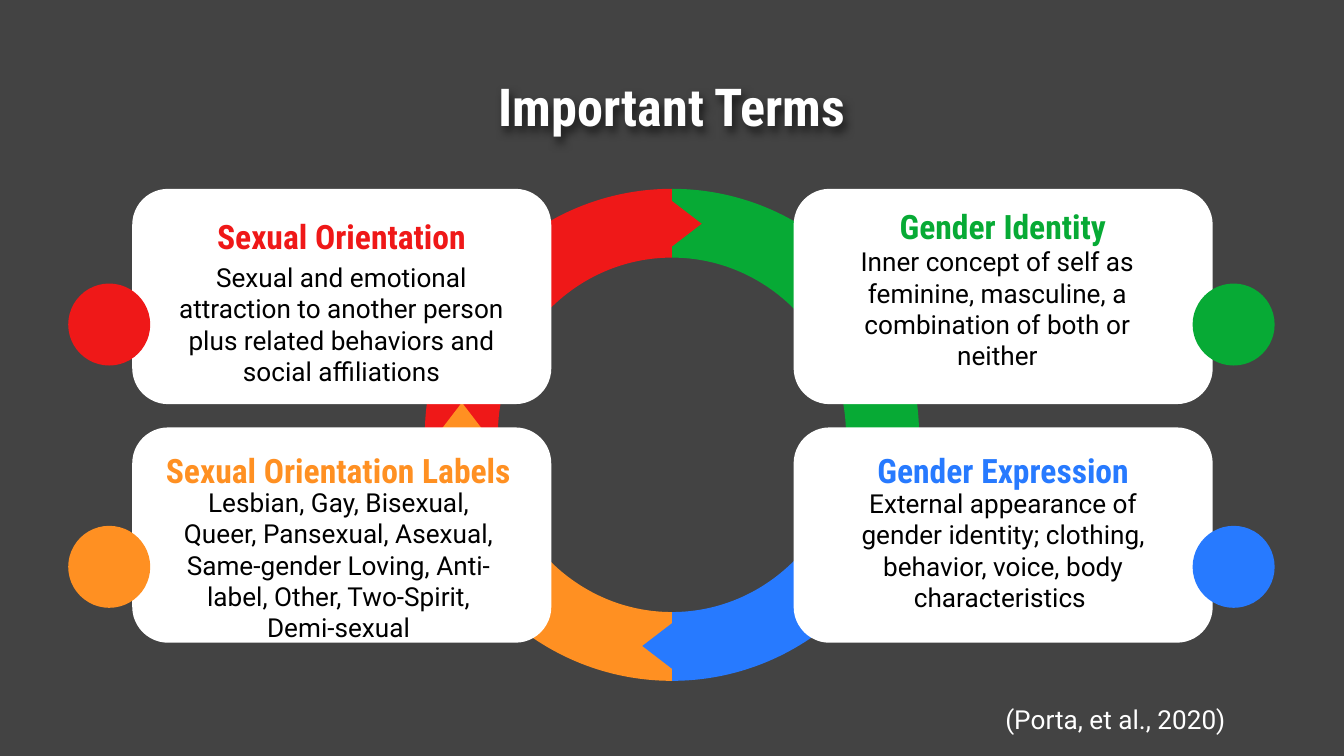
from lxml.etree import SubElement, fromstring
from pptx import Presentation
from pptx.dml.color import RGBColor
from pptx.enum.shapes import MSO_SHAPE
from pptx.enum.text import MSO_ANCHOR, PP_ALIGN
from pptx.oxml.ns import qn
from pptx.util import Cm, Pt

BACKGROUND = RGBColor(0x43, 0x43, 0x43)
WHITE = RGBColor(0xFF, 0xFF, 0xFF)
BLACK = RGBColor(0, 0, 0)
RED = RGBColor(0xEF, 0x18, 0x18)
GREEN = RGBColor(0x07, 0xAA, 0x35)
BLUE = RGBColor(0x27, 0x7A, 0xFF)
ORANGE = RGBColor(0xFF, 0x90, 0x22)
HEADING_FONT, BODY_FONT = "Roboto Condensed", "Roboto"

# Content: column, row, colour, heading and its box, body and its box (cm)
TERMS = [
    (0, 0, RED, "Sexual Orientation", (3.66, 3.86, 5.59, 1.19),
     "Sexual and emotional attraction to another person plus related "
     "behaviors and social affiliations", (3.0, 4.87, 6.91, 2.51)),
    (1, 0, GREEN, "Gender Identity", (16.73, 3.68, 4.45, 1.19),
     "Inner concept of self as feminine, masculine, a combination of both "
     "or neither", (15.6, 4.75, 6.5, 2.16)),
    (0, 1, ORANGE, "Sexual Orientation Labels", (2.84, 8.29, 7.11, 1.19),
     "Lesbian, Gay, Bisexual, Queer, Pansexual, Asexual, Same-gender Loving, "
     "Anti-label, Other, Two-Spirit, Demi-sexual", (2.98, 9.47, 6.84, 2.41)),
    (1, 1, BLUE, "Gender Expression", (16.24, 8.29, 5.44, 1.19),
     "External appearance of gender identity; clothing, behavior, voice, "
     "body characteristics ", (15.8, 9.31, 6.32, 2.18)),
]
CARD_LEFTS, CARD_TOPS, CARD_SIZE = (2.5, 15.0), (3.57, 8.08), (7.92, 4.07)
DOT_LEFTS, DOT_TOPS, DOT_SIZE = (1.29, 22.54), (5.36, 9.94), 1.55

# Ring: horizontal and vertical direction of each quarter, colour
RING_CENTER = (12.7, 8.22)
OUTER_RADII, INNER_RADII = (4.67, 4.65), (3.29, 3.35)
QUARTERS = [(1, -1, GREEN), (-1, -1, RED), (1, 1, BLUE), (-1, 1, ORANGE)]
ARC_HANDLE = 0.55

# Arrow tips: centre, rotation, colour
TIP_SIZE = (0.89, 0.58)
TIPS = [(12.97, 4.23, 90, RED), (12.43, 12.21, 270, BLUE), (8.73, 7.9, 0, ORANGE)]

TITLE_SHADOW = (
    '<a:effectLst xmlns:a="http://schemas.openxmlformats.org/drawingml/2006/main">'
    '<a:outerShdw blurRad="57150" dist="38100" dir="3600000" algn="bl" rotWithShape="0">'
    '<a:srgbClr val="000000"><a:alpha val="60000"/></a:srgbClr>'
    '</a:outerShdw></a:effectLst>')

presentation = Presentation()
presentation.slide_width, presentation.slide_height = Cm(25.4), Cm(14.29)
slide = presentation.slides.add_slide(presentation.slide_layouts[6])
slide.background.fill.solid()
slide.background.fill.fore_color.rgb = BACKGROUND


def paint(shape, color):
    shape.shadow.inherit = False
    shape.fill.solid()
    shape.fill.fore_color.rgb = color
    shape.line.fill.background()


def add_shape(kind, box, color):
    shape = slide.shapes.add_shape(kind, *map(Cm, box))
    paint(shape, color)
    return shape


def add_text(text, box, font, size, color, bold=False,
             align=PP_ALIGN.CENTER, anchor=MSO_ANCHOR.MIDDLE):
    text_box = slide.shapes.add_textbox(*map(Cm, box))
    frame = text_box.text_frame
    frame.word_wrap = True
    frame.vertical_anchor = anchor
    frame.margin_left = frame.margin_right = Pt(7.2)
    frame.margin_top = frame.margin_bottom = Pt(7.2)
    frame.text = text
    paragraph = frame.paragraphs[0]
    paragraph.alignment = align
    run = paragraph.runs[0]
    run.font.name, run.font.size, run.font.bold = font, Pt(size), bold
    run.font.color.rgb = color
    return text_box


def arc_points(radii, across, down):
    """Start, two handles and end of a quarter arc from the vertical axis."""
    steps = [(0, 1), (ARC_HANDLE, 1), (1, ARC_HANDLE), (1, 0)]
    return [(Cm(RING_CENTER[0] + across * radii[0] * x),
             Cm(RING_CENTER[1] + down * radii[1] * y)) for x, y in steps]


def curve_segments(shape, first_segments):
    """Join three line segments into one curve at each given index."""
    lines = list(shape._element.iter(qn("a:lnTo")))
    for first in first_segments:
        curve = SubElement(lines[first].getparent(), qn("a:cubicBezTo"))
        lines[first].addprevious(curve)
        for line in lines[first:first + 3]:
            curve.append(line[0])
            line.getparent().remove(line)


# Title
title = add_text("Important Terms", (1.27, 1.15, 22.86, 1.6), HEADING_FONT,
                 28, WHITE, bold=True, anchor=MSO_ANCHOR.TOP)
title._element.spPr.append(fromstring(TITLE_SHADOW))

# Ring and its arrow tips
for across, down, color in QUARTERS:
    outer = arc_points(OUTER_RADII, across, down)
    inner = arc_points(INNER_RADII, across, down)
    builder = slide.shapes.build_freeform(*outer[0])
    builder.add_line_segments(outer[1:] + inner[::-1], close=True)
    quarter = builder.convert_to_shape()
    curve_segments(quarter, (0, 4))
    paint(quarter, color)

width, height = TIP_SIZE
for x, y, rotation, color in TIPS:
    tip = add_shape(MSO_SHAPE.ISOSCELES_TRIANGLE,
                    (x - width / 2, y - height / 2, width, height), color)
    tip.rotation = rotation

# Term cards
for column, row, color, heading, heading_box, body, body_box in TERMS:
    add_shape(MSO_SHAPE.ROUNDED_RECTANGLE,
              (CARD_LEFTS[column], CARD_TOPS[row], *CARD_SIZE), WHITE)
    add_text(heading, heading_box, HEADING_FONT, 18, color, bold=True)
    add_text(body, body_box, BODY_FONT, 14, BLACK)
    add_shape(MSO_SHAPE.OVAL,
              (DOT_LEFTS[column], DOT_TOPS[row], DOT_SIZE, DOT_SIZE), color)

# Citation
add_text("(Porta, et al., 2020)", (18.75, 13.04, 5.08, 1.12), BODY_FONT, 14,
         WHITE, align=PP_ALIGN.LEFT, anchor=MSO_ANCHOR.TOP)

presentation.save("out.pptx")
